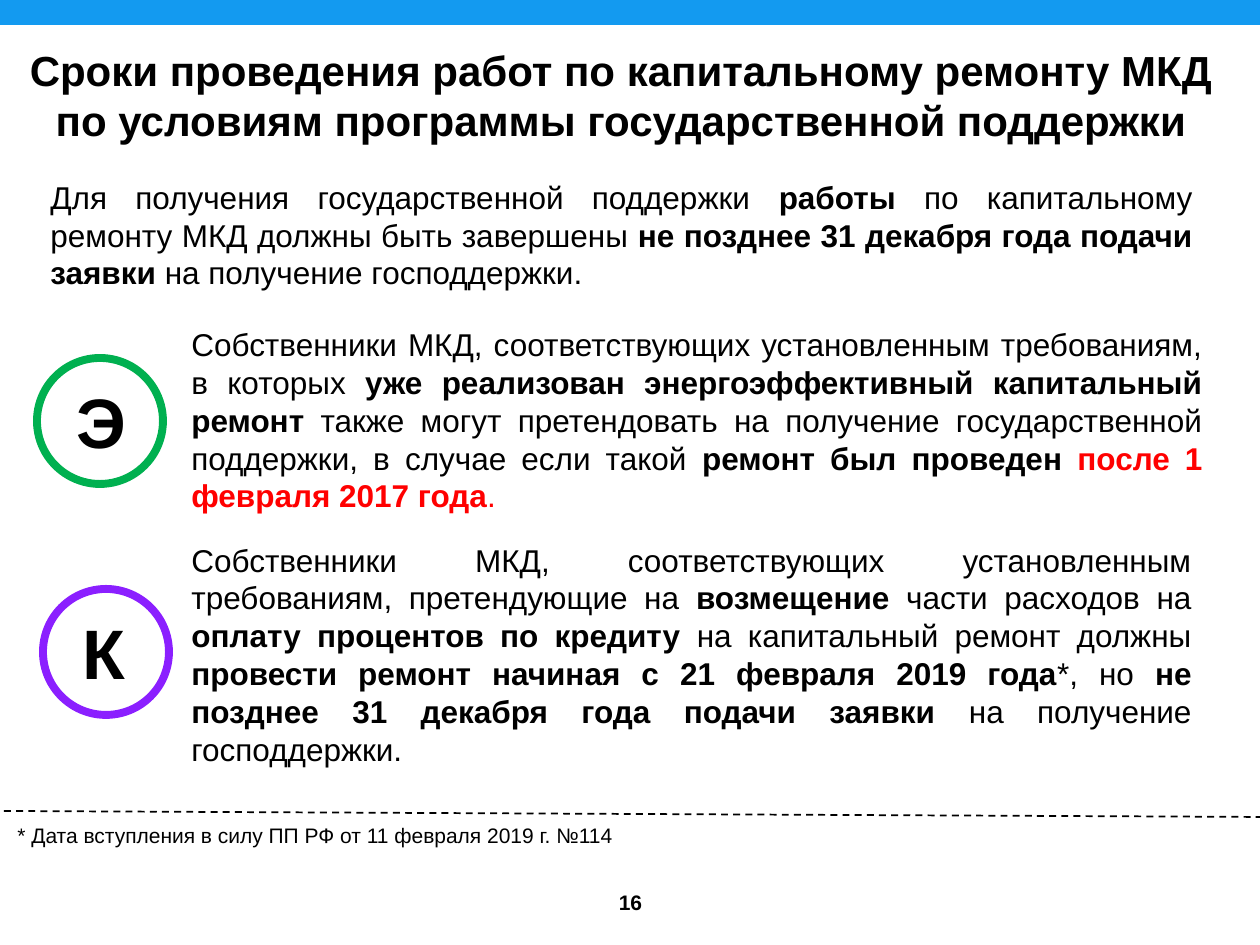
from dataclasses import dataclass

from lxml import etree
from pptx import Presentation
from pptx.dml.color import RGBColor
from pptx.enum.dml import MSO_LINE
from pptx.enum.shapes import MSO_CONNECTOR, MSO_SHAPE
from pptx.enum.text import MSO_ANCHOR, PP_ALIGN
from pptx.oxml.ns import qn
from pptx.util import Emu, Pt

PX = 914400 / 126
SLIDE_SIZE = (1260, 945)
LEFT, CENTER, JUSTIFY = PP_ALIGN.LEFT, PP_ALIGN.CENTER, PP_ALIGN.JUSTIFY
TOP, MIDDLE = MSO_ANCHOR.TOP, MSO_ANCHOR.MIDDLE
OVAL, RECTANGLE = MSO_SHAPE.OVAL, MSO_SHAPE.RECTANGLE
STRAIGHT, DASH = MSO_CONNECTOR.STRAIGHT, MSO_LINE.DASH


@dataclass(frozen=True)
class Theme:
    font: str = "Arial"
    ink: str = "000000"
    accent: str = "FF0000"
    band: str = "139AF0"
    efficiency: str = "00B050"
    credit: str = "8B1FFF"
    title: int = 24
    body: int = 18
    badge: int = 40
    small: int = 12
    ring: float = 4.5


THEME = Theme()

# Each passage is a list of (text, bold, colour) pieces
INTRO = [
    ("Для получения государственной поддержки ", False, THEME.ink),
    ("работы", True, THEME.ink),
    (" по капитальному ремонту МКД должны быть завершены ", False, THEME.ink),
    ("не позднее 31 декабря года подачи заявки ", True, THEME.ink),
    ("на получение господдержки.", False, THEME.ink),
]
EFFICIENCY = [
    ("Собственники МКД, соответствующих установленным требованиям, в которых ",
     False, THEME.ink),
    ("уже реализован энергоэффективный капитальный ремонт", True, THEME.ink),
    (" также могут претендовать на получение государственной поддержки, "
     "в случае если такой ", False, THEME.ink),
    ("ремонт был проведен ", True, THEME.ink),
    ("после 1 февраля 2017 года", True, THEME.accent),
    (".", False, THEME.accent),
]
CREDIT = [
    ("Собственники МКД, соответствующих установленным требованиям, "
     "претендующие на ", False, THEME.ink),
    ("возмещение", True, THEME.ink),
    (" части расходов на ", False, THEME.ink),
    ("оплату процентов по кредиту ", True, THEME.ink),
    ("на капитальный ремонт должны ", False, THEME.ink),
    ("провести ремонт начиная с 21 февраля 2019 года", True, THEME.ink),
    ("*, но ", False, THEME.ink),
    ("не позднее 31 декабря года подачи заявки ", True, THEME.ink),
    ("на получение господдержки.", False, THEME.ink),
]


def px(*lengths):
    return [Emu(round(length * PX)) for length in lengths]


def rgb(value):
    return RGBColor.from_string(value)


def add_passage(slide, box, pieces, size, align=JUSTIFY, anchor=TOP):
    frame = slide.shapes.add_textbox(*px(*box)).text_frame
    frame.word_wrap = True
    frame.vertical_anchor = anchor
    paragraph = frame.paragraphs[0]
    paragraph.alignment = align
    for text, bold, color in pieces:
        run = paragraph.add_run()
        run.text = text
        run.font.name = THEME.font
        run.font.size = Pt(size)
        run.font.bold = bold
        run.font.color.rgb = rgb(color)


def add_band(slide):
    band = slide.shapes.add_shape(RECTANGLE, *px(0, 0, SLIDE_SIZE[0], 25))
    band.shadow.inherit = False
    band.fill.solid()
    band.fill.fore_color.rgb = rgb(THEME.band)
    band.line.fill.background()


def add_badge(slide, left, top, letter, color):
    ring = slide.shapes.add_shape(OVAL, *px(left, top, 126, 126))
    ring.shadow.inherit = False
    ring.fill.background()
    ring.line.color.rgb = rgb(color)
    ring.line.width = Pt(THEME.ring)
    add_passage(slide, (left + 27, top + 14, 72, 97),
                [(letter, True, THEME.ink)], THEME.badge, LEFT)


def add_dashed_rule(slide, start, end):
    rule = slide.shapes.add_connector(STRAIGHT, *px(*start, *end))
    rule.line.color.rgb = rgb(THEME.ink)
    rule.line.width = Pt(1)
    rule.line.dash_style = DASH
    etree.SubElement(rule._element.spPr, qn("a:effectLst"))


def main():
    prs = Presentation()
    prs.slide_width, prs.slide_height = px(*SLIDE_SIZE)
    slide = prs.slides.add_slide(prs.slide_layouts[6])

    # Header band, page number and title
    add_band(slide)
    add_passage(slide, (575, 878, 111, 49), [("16", True, THEME.ink)],
                THEME.small, CENTER, MIDDLE)
    title = ("Сроки проведения работ по капитальному ремонту МКД "
             "по условиям программы государственной поддержки")
    add_passage(slide, (0, 37, 1242, 115), [(title, True, THEME.ink)],
                THEME.title, CENTER, MIDDLE)

    # General deadline
    add_passage(slide, (38, 171, 1167, 127), INTRO, THEME.body, anchor=MIDDLE)

    # Energy efficiency and credit conditions
    add_badge(slide, 37, 358, "Э", THEME.efficiency)
    add_passage(slide, (179, 319, 1036, 204), EFFICIENCY, THEME.body)
    add_passage(slide, (179, 533, 1025, 242), CREDIT, THEME.body, anchor=MIDDLE)
    add_badge(slide, 43, 589, "К", THEME.credit)

    # Footnote
    footnote = "* Дата вступления в силу ПП РФ от 11 февраля 2019 г. №114"
    add_passage(slide, (5, 816, 1236, 38), [(footnote, False, THEME.ink)],
                THEME.small)
    add_dashed_rule(slide, (4, 811), (1264, 817))

    prs.save("out.pptx")


if __name__ == "__main__":
    main()
